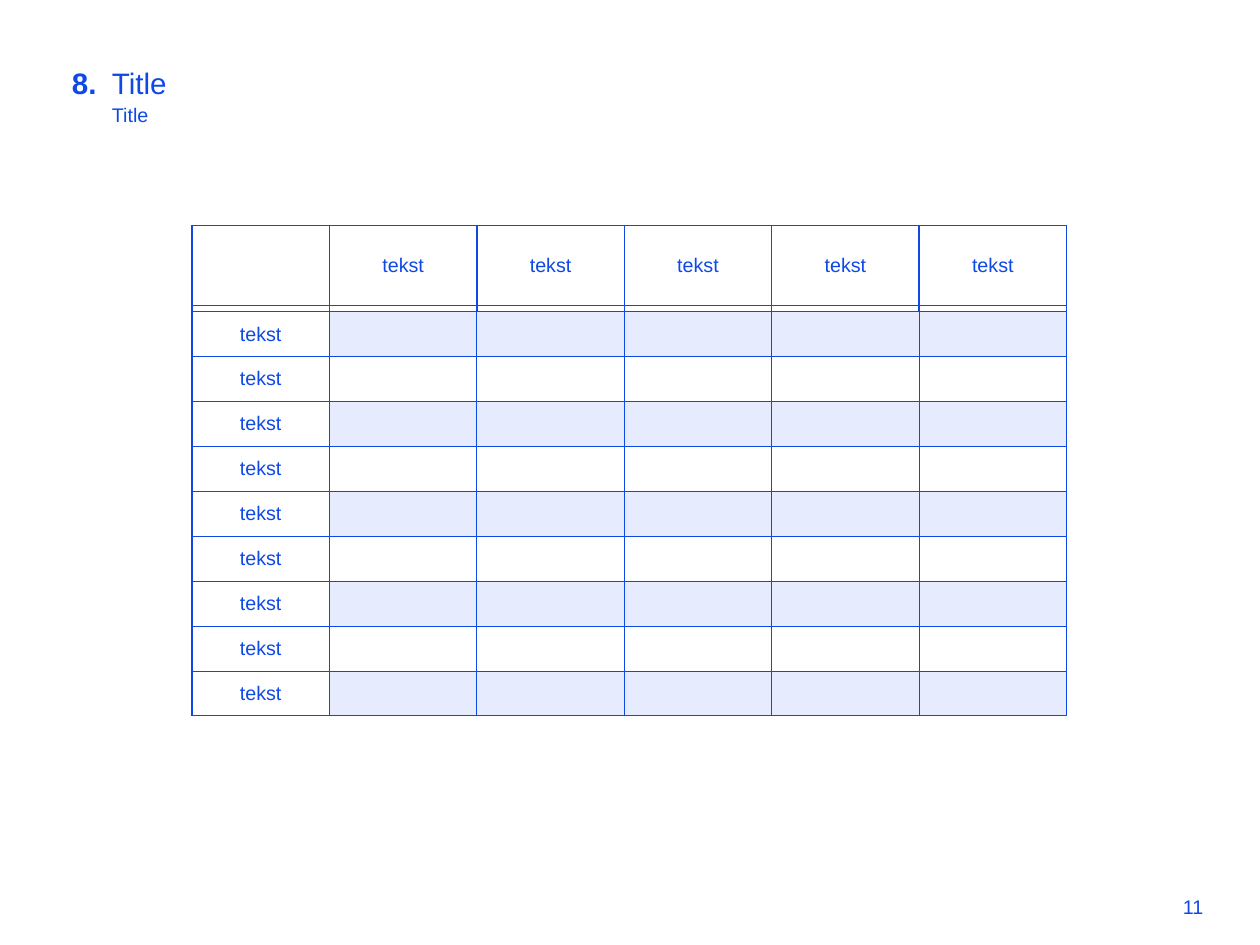
import pptx
import pptx.dml.color
import pptx.enum.text
import pptx.oxml.ns
import pptx.util
from lxml import etree

BLUE = pptx.dml.color.RGBColor(0x0E, 0x49, 0xE8)
PALE_BLUE = pptx.dml.color.RGBColor(0xE6, 0xEC, 0xFD)
WHITE = pptx.dml.color.RGBColor(0xFF, 0xFF, 0xFF)
ALIGN = pptx.enum.text.PP_ALIGN
ANCHOR = pptx.enum.text.MSO_ANCHOR
FONT = "Arial"
TITLE_SIZE = 45
BODY_SIZE = 30
THIN, THICK = 1.5, 2.25

HEADINGS = [""] + ["tekst"] * 5
ROW_LABELS = ["tekst"] * 9
COLUMN_SHARES = [10.92] + [11.7] * 5
ROW_SHARES = [8.45, 0.65] + [4.75] * 9
HEADER_ROWS = 2


def write(frame, text, size=BODY_SIZE, bold=False, align=ALIGN.LEFT, line=None):
    para = frame.paragraphs[0]
    para.alignment = align
    if line:
        para.line_spacing = pptx.util.Pt(line)
    span = para.add_run()
    span.text = text
    span.font.name = FONT
    span.font.size = pptx.util.Pt(size)
    span.font.bold = bold
    span.font.color.rgb = BLUE


class SlideBuilder:
    def __init__(self, deck):
        self.page_width = deck.slide_width
        self.page_height = deck.slide_height
        self.page = deck.slides.add_slide(deck.slide_layouts[5])

    def across(self, percent):
        return round(self.page_width * percent / 100)

    def down(self, percent):
        return round(self.page_height * percent / 100)

    def area(self, left, top, width, height):
        return self.across(left), self.down(top), self.across(width), self.down(height)

    def prepare(self, frame, anchor):
        frame.word_wrap = True
        frame.auto_size = pptx.enum.text.MSO_AUTO_SIZE.NONE
        frame.vertical_anchor = anchor

    def title(self, text, area, **style):
        box = self.page.shapes.title
        box.left, box.top, box.width, box.height = self.area(*area)
        self.prepare(box.text_frame, ANCHOR.TOP)
        write(box.text_frame, text, **style)

    def text(self, text, area, anchor=ANCHOR.TOP, **style):
        box = self.page.shapes.add_textbox(*self.area(*area))
        self.prepare(box.text_frame, anchor)
        write(box.text_frame, text, **style)

    def border(self, cell, side, width):
        properties = cell._tc.get_or_add_tcPr()
        line = etree.SubElement(properties, pptx.oxml.ns.qn(f"a:ln{side}"),
                                w=str(pptx.util.Pt(width)))
        fill = etree.SubElement(line, pptx.oxml.ns.qn("a:solidFill"))
        etree.SubElement(fill, pptx.oxml.ns.qn("a:srgbClr"), val=str(BLUE))

    def flatten(self, cell):
        cell.margin_top = cell.margin_bottom = 0
        para = cell.text_frame.paragraphs[0]
        etree.SubElement(para._p, pptx.oxml.ns.qn("a:endParaRPr"), sz="100")

    def table(self, rows, left, top, column_shares, row_shares):
        area = self.area(left, top, sum(column_shares), sum(row_shares))
        table = self.page.shapes.add_table(len(rows), len(column_shares), *area).table
        table.first_row = table.horz_banding = False
        for column, share in zip(table.columns, column_shares):
            column.width = self.across(share)
        for row, share in zip(table.rows, row_shares):
            row.height = self.down(share)
        thick_columns = {0, 1, len(column_shares)}
        thick_rows = {0, 1, HEADER_ROWS, len(rows)}
        for r, texts in enumerate(rows):
            for c, text in enumerate(texts):
                cell = table.cell(r, c)
                for side, edge in (("L", c), ("R", c + 1)):
                    thick = r < HEADER_ROWS or edge in thick_columns
                    self.border(cell, side, THICK if thick else THIN)
                for side, edge in (("T", r), ("B", r + 1)):
                    self.border(cell, side, THICK if edge in thick_rows else THIN)
                shaded = c > 0 and r >= HEADER_ROWS and (r - HEADER_ROWS) % 2 == 0
                cell.fill.solid()
                cell.fill.fore_color.rgb = PALE_BLUE if shaded else WHITE
                cell.vertical_anchor = ANCHOR.MIDDLE
                if text:
                    write(cell.text_frame, text, align=ALIGN.CENTER)
                elif r == HEADER_ROWS - 1:
                    self.flatten(cell)


def main():
    deck = pptx.Presentation()
    deck.slide_width = pptx.util.Inches(26.66)
    deck.slide_height = pptx.util.Inches(20)
    slide = SlideBuilder(deck)
    slide.title("Title", (8.51, 5.55, 73.52, 4.9), size=TITLE_SIZE, line=70)
    slide.text("11", (89.23, 94.4, 6.64, 3.05), anchor=ANCHOR.MIDDLE, align=ALIGN.RIGHT)
    slide.text("8.", (1.99, 5.55, 6.04, 4.9), size=TITLE_SIZE, bold=True,
               align=ALIGN.RIGHT, line=70)
    slide.text("Title", (8.51, 10.05, 73.52, 3.65), line=45)
    blanks = [""] * 5
    rows = [HEADINGS, [""] + blanks] + [[label] + blanks for label in ROW_LABELS]
    slide.table(rows, 15.23, 23.9, COLUMN_SHARES, ROW_SHARES)
    deck.save("out.pptx")


if __name__ == "__main__":
    main()
